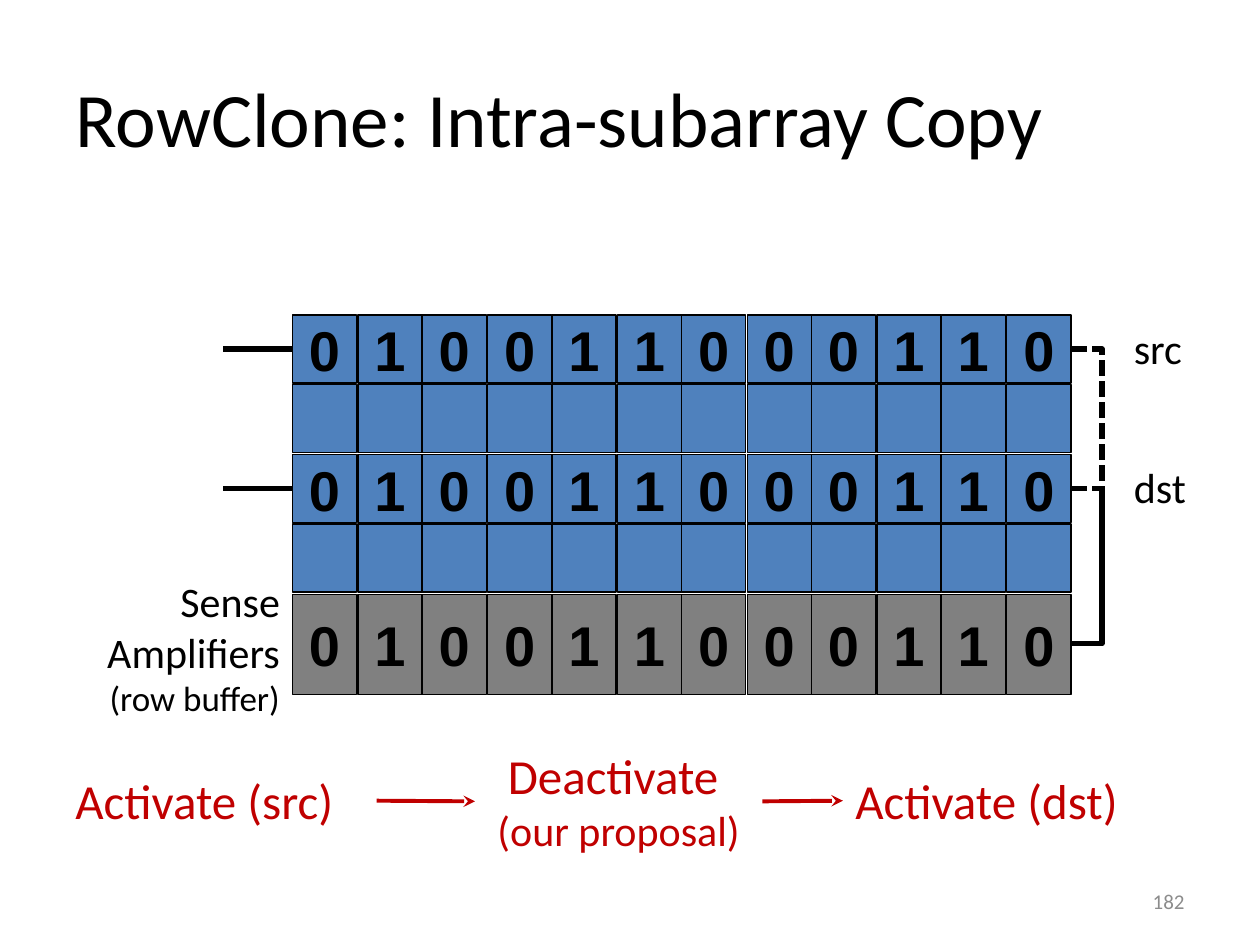
from dataclasses import dataclass
from lxml.etree import SubElement
from pptx import Presentation
from pptx.dml.color import RGBColor as Rgb
from pptx.enum.dml import MSO_LINE as Dash
from pptx.enum.shapes import MSO_CONNECTOR as Conn, MSO_SHAPE as Form
from pptx.enum.text import MSO_ANCHOR as Anchor, PP_ALIGN as Align
from pptx.oxml.ns import qn
from pptx.util import Pt

PX = 9144  # EMU per px, 100 px to the inch
BLACK, RED, BLUE, GRAY, PALE = "000000", "C00000", "4F81BD", "808080", "8C8C8C"
BITS = "010011000110"
LEFT, SPAN, CELL = 232, 567, 51  # first cell, first to last cell, cell width
BEND = 25  # how far the copy path runs out to the right


@dataclass
class Row:
    top: int
    high: int
    fill: str
    bits: str


@dataclass
class Label:
    box: tuple[int, int, int, int]
    lines: list[tuple[str, int]]
    tint: str = BLACK
    align: Align = Align.LEFT
    anchor: Anchor = Anchor.TOP


ROWS = [
    Row(250, 54, BLUE, BITS),
    Row(305, 54, BLUE, " " * len(BITS)),
    Row(361, 54, BLUE, BITS),
    Row(416, 54, BLUE, " " * len(BITS)),
    Row(472, 79, GRAY, BITS),
]
STEPS = [
    Label((50, 607, 249, 57), [("Activate (src)", 28)], RED),
    Label((377, 587, 228, 98), [("Deactivate ", 28), ("(our proposal)", 24)],
          RED, Align.CENTER),
    Label((669, 607, 249, 57), [("Activate (dst)", 28)], RED),
]
NOTES = [
    Label((29, 452, 203, 125), [("Sense Amplifiers", 24), ("(row buffer)", 20)],
          align=Align.RIGHT),
    Label((890, 251, 65, 50), [("src", 24)]),
    Label((890, 361, 65, 50), [("dst", 24)]),
    Label((717, 695, 233, 40), [("182", 12)], PALE, Align.RIGHT, Anchor.MIDDLE),
]


def px(*vals: int) -> list[int]:
    return [val * PX for val in vals]


def color(hue: str) -> Rgb:
    return Rgb.from_string(hue)


def write(para, text: str, size: int, tint: str, align: Align,
          face: str = "Calibri", bold: bool = False) -> None:
    para.alignment = align
    run = para.add_run()
    run.text = text
    font = run.font
    font.size, font.name, font.bold = Pt(size), face, bold
    font.color.rgb = color(tint)


def add_cell(slide, left: int, row: Row, bit: str):
    cell = slide.shapes.add_shape(Form.RECTANGLE, *px(left, row.top, CELL, row.high))
    cell.shadow.inherit = False
    cell.fill.solid()
    cell.fill.fore_color.rgb = color(row.fill)
    cell.line.color.rgb = color(BLACK)
    cell.line.width = Pt(0.75)
    cell.text_frame.vertical_anchor = Anchor.MIDDLE
    if bit.strip():
        write(cell.text_frame.paragraphs[0], bit, 32, BLACK, Align.CENTER, "Arial", True)
    return cell


def add_row(slide, row: Row) -> list:
    last = len(row.bits) - 1
    return [add_cell(slide, LEFT + round(SPAN * i / last), row, bit)
            for i, bit in enumerate(row.bits)]


def add_label(slide, label: Label):
    box = slide.shapes.add_textbox(*px(*label.box))
    frame = box.text_frame
    frame.word_wrap = True
    frame.vertical_anchor = label.anchor
    for i, (text, size) in enumerate(label.lines):
        para = frame.add_paragraph() if i else frame.paragraphs[0]
        write(para, text, size, label.tint, label.align)
    return box


def add_line(slide, kind: Conn, ends: tuple, tint: str, width: float):
    line = slide.shapes.add_connector(kind, *px(*ends))
    line.line.color.rgb = color(tint)
    line.line.width = Pt(width)
    SubElement(line._element.spPr, qn("a:effectLst"))
    return line


def add_arrow(slide, start, end) -> None:
    line = add_line(slide, Conn.STRAIGHT, (0, 0, 0, 0), RED, 2.25)
    line.begin_connect(start, 3)
    line.end_connect(end, 1)
    SubElement(line.line._get_or_add_ln(), qn("a:tailEnd"), type="stealth")


def add_word_line(slide, row: Row, cell) -> None:
    mid = row.top + row.high // 2
    line = add_line(slide, Conn.STRAIGHT, (LEFT, mid, LEFT - 55, mid), BLACK, 3)
    line.begin_connect(cell, 1)


def add_path(slide, start: Row, end: Row) -> None:
    """Dashed bracket on the right, from one row to another."""
    side = LEFT + SPAN + CELL
    ends = (side, start.top + start.high // 2, side + 1, end.top + end.high // 2)
    line = add_line(slide, Conn.ELBOW, ends, BLACK, 3)
    line.line.dash_style = Dash.SQUARE_DOT
    # The bend is given in 1/100000 of the 1 px width
    guides = line._element.spPr.find(qn("a:prstGeom")).find(qn("a:avLst"))
    SubElement(guides, qn("a:gd"), name="adj1", fmla=f"val {BEND * 100000}")


def main() -> None:
    deck = Presentation()
    deck.slide_width, deck.slide_height = px(1000, 750)
    slide = deck.slides.add_slide(deck.slide_layouts[5])

    # Title
    title = slide.shapes.title
    title.left, title.top, title.width, title.height = px(50, 30, 900, 125)
    title.text_frame.vertical_anchor = Anchor.MIDDLE
    write(title.text_frame.paragraphs[0], "RowClone: Intra-subarray Copy",
          44, BLACK, Align.LEFT)

    # Subarray and row buffer
    grid = [add_row(slide, row) for row in ROWS]
    src, dst, amps = ROWS[0], ROWS[2], ROWS[4]
    for row, cells in ((src, grid[0]), (dst, grid[2])):
        add_word_line(slide, row, cells[0])
        add_path(slide, row, amps)

    # Steps, joined by arrows
    steps = [add_label(slide, step) for step in STEPS]
    for start, end in zip(steps, steps[1:]):
        add_arrow(slide, start, end)

    # Side labels and page number
    for note in NOTES:
        add_label(slide, note)

    deck.save("out.pptx")


if __name__ == "__main__":
    main()
